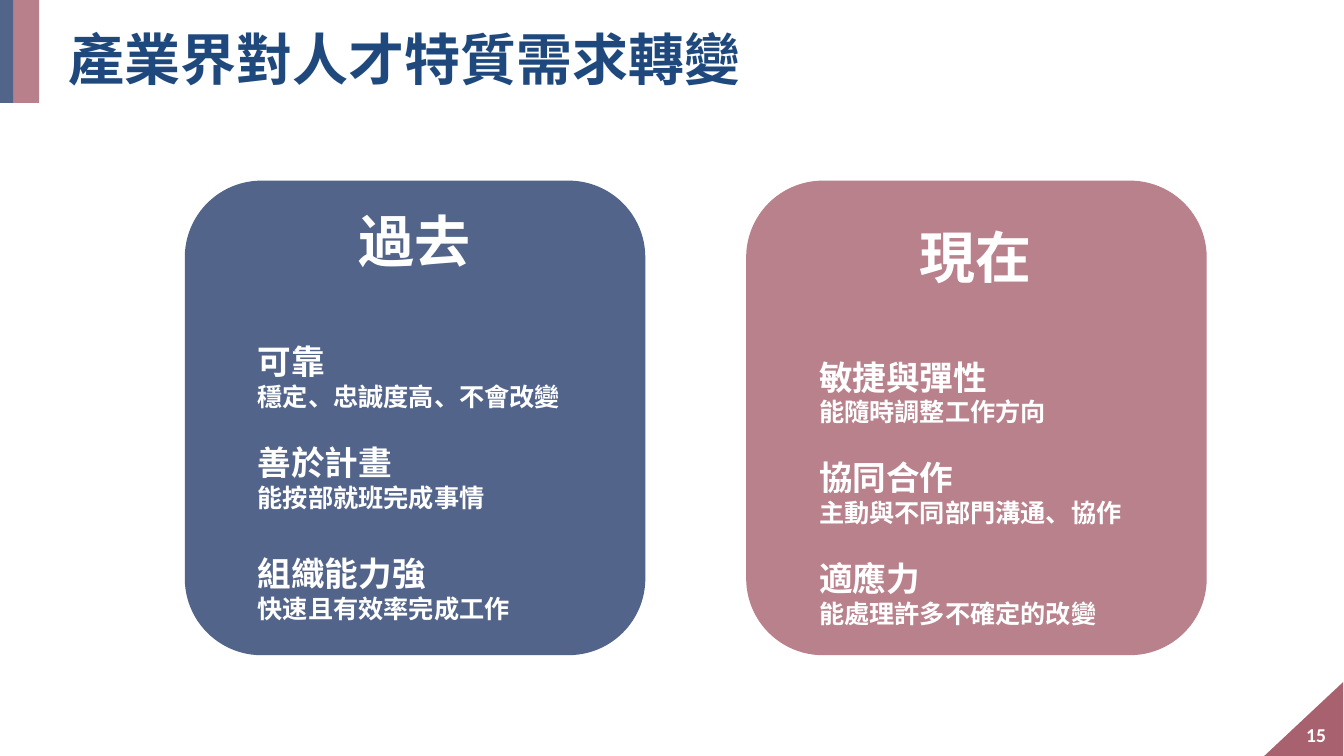
"""Build a slide contrasting past and present talent traits sought by industry."""
from dataclasses import dataclass

from lxml import etree
from pptx import Presentation
from pptx.dml.color import RGBColor
from pptx.enum.shapes import MSO_SHAPE
from pptx.enum.text import MSO_ANCHOR, MSO_AUTO_SIZE, PP_ALIGN
from pptx.oxml.ns import qn
from pptx.util import Pt

RECTANGLE = MSO_SHAPE.RECTANGLE
ROUNDED = MSO_SHAPE.ROUNDED_RECTANGLE
TRIANGLE = MSO_SHAPE.RIGHT_TRIANGLE
LEFT, CENTER = PP_ALIGN.LEFT, PP_ALIGN.CENTER
TOP, MIDDLE = MSO_ANCHOR.TOP, MSO_ANCHOR.MIDDLE
FIT_SHAPE = MSO_AUTO_SIZE.SHAPE_TO_FIT_TEXT


@dataclass(frozen=True)
class Theme:
    """Colours, fonts and type sizes of the slide."""
    navy: str = "1F497D"
    blue: str = "385D8A"
    rose: str = "A7616F"
    past: str = "52648A"
    present: str = "B9818C"
    white: str = "FFFFFF"
    cjk_font: str = "Noto Sans CJK SC"
    number_font: str = "Calibri"
    heading: int = 40
    trait: int = 24
    detail: int = 18
    number: int = 14
    leading: float = 1.2


class SlideBuilder:
    """Draws styled elements on the current slide."""

    def __init__(self, slide, theme):
        self.slide = slide
        self.theme = theme

    def block(self, kind, left, top, width, height, color, opacity=100, rotation=0):
        """Add a filled shape without an outline."""
        shape = self.slide.shapes.add_shape(kind, Pt(left), Pt(top), Pt(width), Pt(height))
        shape.shadow.inherit = False
        shape.rotation = rotation
        shape.fill.solid()
        shape.fill.fore_color.rgb = RGBColor.from_string(color)
        shape.line.fill.background()
        if opacity < 100:
            fill_color = shape.element.spPr.find(".//" + qn("a:srgbClr"))
            etree.SubElement(fill_color, qn("a:alpha"), val=str(opacity * 1000))

    def frame(self, left, top, width, height, anchor):
        """Add a wrapping text box and return its text frame."""
        box = self.slide.shapes.add_textbox(Pt(left), Pt(top), Pt(width), Pt(height))
        box.text_frame.word_wrap = True
        box.text_frame.vertical_anchor = anchor
        return box.text_frame

    def add_text(self, paragraph, text, size, color, font, alignment=LEFT):
        """Add one bold run to a paragraph."""
        paragraph.alignment = alignment
        run = paragraph.add_run()
        run.text = text
        run.font.size = Pt(size)
        run.font.bold = True
        run.font.color.rgb = RGBColor.from_string(color)
        run.font.name = font
        etree.SubElement(run.font._element, qn("a:ea"), typeface=font)

    def label(self, left, top, width, height, text, size, color, font, alignment=LEFT):
        """Add a single line of vertically centred text."""
        frame = self.frame(left, top, width, height, MIDDLE)
        self.add_text(frame.paragraphs[0], text, size, color, font, alignment)

    def card(self, left, text_top, text_height, color, heading, traits):
        """Add a rounded card with a heading and its traits."""
        theme = self.theme
        self.block(ROUNDED, left, 129, 329, 339, color)
        frame = self.frame(left + 45, text_top, 238, text_height, TOP)
        frame.margin_top = Pt(6.6)
        frame.auto_size = FIT_SHAPE
        lines = [(heading, theme.heading, 0, CENTER)]
        for gap, trait, detail in traits:
            lines.append((trait, theme.trait, gap, LEFT))
            lines.append((detail, theme.detail, 0, LEFT))
        for index, (text, size, gap, alignment) in enumerate(lines):
            paragraph = frame.add_paragraph() if index else frame.paragraphs[0]
            paragraph.line_spacing = Pt(size * theme.leading)
            if gap:
                paragraph.space_before = Pt(gap * theme.leading)
            self.add_text(paragraph, text, size, theme.white, theme.cjk_font, alignment)


def main():
    """Build and save the presentation."""
    theme = Theme()
    presentation = Presentation()
    presentation.slide_width, presentation.slide_height = Pt(960), Pt(540)
    slide = presentation.slides.add_slide(presentation.slide_layouts[6])
    builder = SlideBuilder(slide, theme)

    builder.block(TRIANGLE, 904.5, 485.3, 53.2, 56.8, theme.rose, rotation=270)
    builder.block(RECTANGLE, 0, 0, 28, 73.5, theme.rose, opacity=80)
    builder.block(RECTANGLE, 0, 0, 9.4, 73.5, theme.blue, opacity=80)
    builder.label(42, 16.5, 864, 50, "產業界對人才特質需求轉變",
                  theme.heading, theme.navy, theme.cjk_font)
    builder.label(920, 510, 40, 29, "15", theme.number, theme.white,
                  theme.number_font, CENTER)

    builder.card(132, 141, 308, theme.past, "過去", [
        (theme.heading, "可靠", "穩定、忠誠度高、不會改變"),
        (theme.detail, "善於計畫", "能按部就班完成事情"),
        (theme.trait, "組織能力強", "快速且有效率完成工作"),
    ])
    builder.card(533, 152, 300, theme.present, "現在", [
        (theme.heading, "敏捷與彈性", "能隨時調整工作方向"),
        (theme.detail, "協同合作", "主動與不同部門溝通、協作"),
        (theme.detail, "適應力", "能處理許多不確定的改變"),
    ])
    presentation.save("out.pptx")


if __name__ == "__main__":
    main()
